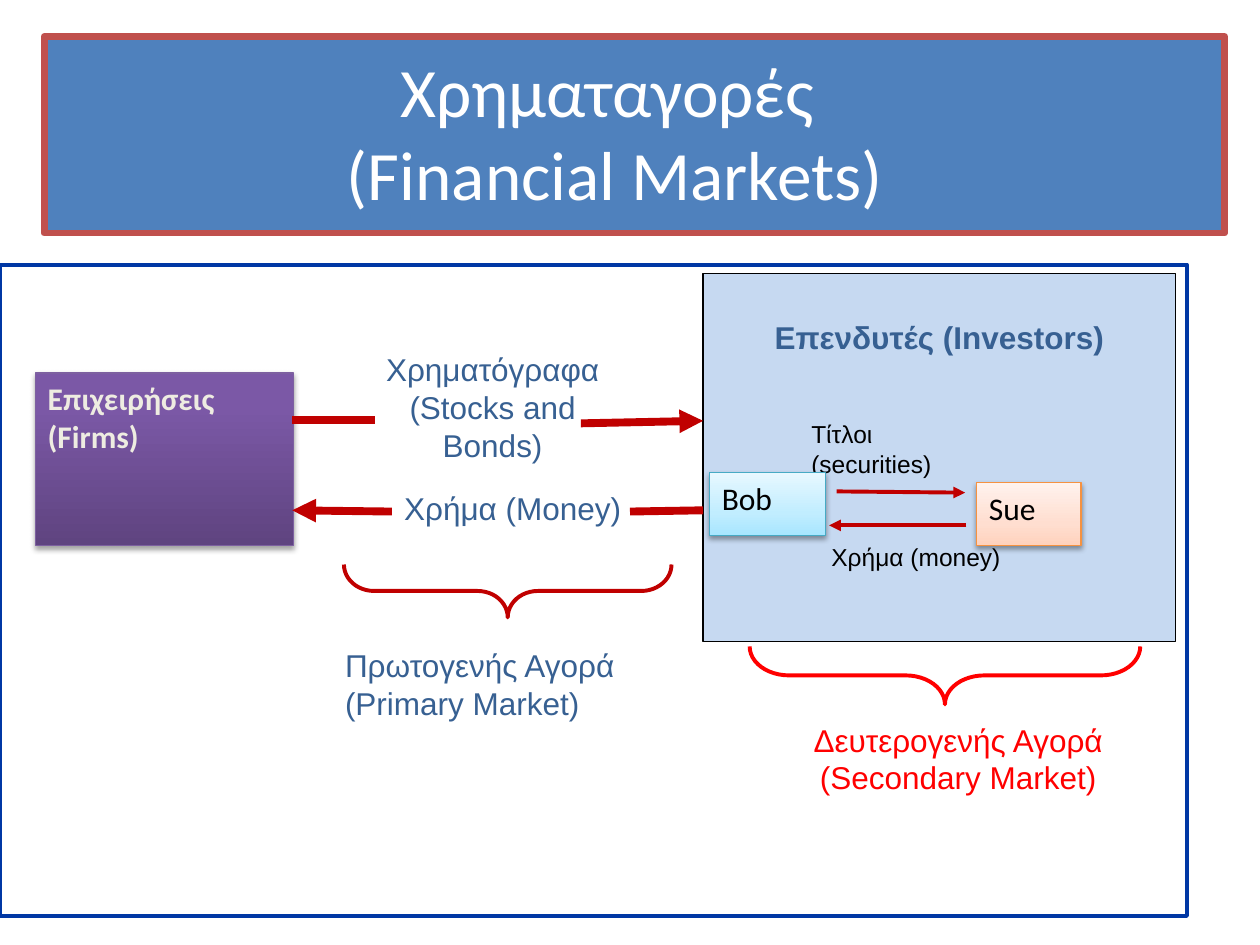
from copy import deepcopy

from lxml import etree
from pptx import Presentation
from pptx.dml.color import RGBColor
from pptx.enum.shapes import MSO_CONNECTOR, MSO_SHAPE
from pptx.enum.text import MSO_ANCHOR, PP_ALIGN
from pptx.oxml.ns import qn
from pptx.util import Emu, Pt

PX = 9144

RECTANGLE, LEFT_BRACE = MSO_SHAPE.RECTANGLE, MSO_SHAPE.LEFT_BRACE
STRAIGHT = MSO_CONNECTOR.STRAIGHT
TOP, MIDDLE = MSO_ANCHOR.TOP, MSO_ANCHOR.MIDDLE
LEFT, CENTER = PP_ALIGN.LEFT, PP_ALIGN.CENTER

WHITE = RGBColor(0xFF, 0xFF, 0xFF)
BLACK = RGBColor(0x00, 0x00, 0x00)
BLUE = RGBColor(0x4F, 0x81, 0xBD)
BRICK = RGBColor(0xC0, 0x50, 0x4D)
FRAME_BLUE = RGBColor(0x00, 0x37, 0xA4)
PALE_BLUE = RGBColor(0xC6, 0xD9, 0xF1)
TEXT_BLUE = RGBColor(0x37, 0x60, 0x92)
CREAM = RGBColor(0xEE, 0xEC, 0xE1)
DARK_RED = RGBColor(0xC0, 0x00, 0x00)
RED = RGBColor(0xFF, 0x00, 0x00)
PURPLE_LINE = RGBColor(0x7D, 0x60, 0xA0)
ORANGE_LINE = RGBColor(0xF6, 0x92, 0x40)
AQUA_LINE = RGBColor(0x46, 0xAA, 0xC5)
PURPLE_STOPS = ((0, RGBColor(0x5F, 0x44, 0x80)), (0.8, RGBColor(0x7B, 0x58, 0xA6)),
                (1, RGBColor(0x7C, 0x57, 0xA8)))
ORANGE_STOPS = ((0, RGBColor(0xFF, 0xD2, 0xBD)), (0.35, RGBColor(0xFF, 0xDE, 0xD0)),
                (1, RGBColor(0xFF, 0xF2, 0xED)))
AQUA_STOPS = ((0, RGBColor(0xA7, 0xE6, 0xFF)), (0.35, RGBColor(0xC1, 0xED, 0xFF)),
              (1, RGBColor(0xE7, 0xF8, 0xFF)))


def px(*lengths):
    return [Emu(length * PX) for length in lengths]


def write_text(shape, text, size=18, font="Arial", color=TEXT_BLUE, bold=False,
               align=LEFT, anchor=TOP, margin_top=5):
    frame = shape.text_frame
    frame.word_wrap = True
    frame.vertical_anchor = anchor
    frame.margin_top = Emu(margin_top * PX)
    paragraph = frame.paragraphs[0]
    paragraph.text = text
    paragraph.alignment = align
    for run in paragraph.runs:
        run.font.size = Pt(size)
        run.font.name = font
        run.font.bold = bold
        run.font.color.rgb = color


def add_label(slide, box, text, **text_format):
    write_text(slide.shapes.add_textbox(*px(*box)), text, **text_format)


def add_box(slide, box, fill, line, line_width):
    shape = slide.shapes.add_shape(RECTANGLE, *px(*box))
    shape.shadow.inherit = False
    shape.fill.solid()
    shape.fill.fore_color.rgb = fill
    shape.line.color.rgb = line
    shape.line.width = Pt(line_width)
    return shape


def add_raised_box(slide, box, stops, line, text, color):
    shape = add_box(slide, box, WHITE, line, 0.75)
    shape.fill.gradient()
    shape.fill.gradient_angle = 90
    properties = shape._element.spPr
    stop_list = properties.find(".//" + qn("a:gsLst"))
    stop_list.insert(1, deepcopy(stop_list[0]))
    for stop, (position, stop_color) in zip(shape.fill.gradient_stops, stops):
        stop.position = position
        stop.color.rgb = stop_color
    shadow = etree.SubElement(properties.find(qn("a:effectLst")), qn("a:outerShdw"),
                              blurRad=str(Pt(3.1)), dist=str(Pt(1.7)),
                              dir="5400000", rotWithShape="0")
    shadow_color = etree.SubElement(shadow, qn("a:srgbClr"), val="000000")
    etree.SubElement(shadow_color, qn("a:alpha"), val="36000")
    write_text(shape, text, font="Calibri", color=color, bold=color == CREAM)


def add_line(slide, start, end, width, arrow=True):
    connector = slide.shapes.add_connector(STRAIGHT, *px(*start, *end))
    connector.line.color.rgb = DARK_RED
    connector.line.width = Pt(width)
    properties = connector._element.spPr
    if arrow:
        etree.SubElement(properties.find(qn("a:ln")), qn("a:tailEnd"), type="triangle")
    etree.SubElement(properties, qn("a:effectLst"))


def add_brace(slide, box, color, curve):
    left, top, width, height = box
    offset = (width - height) // 2
    brace = slide.shapes.add_shape(
        LEFT_BRACE, *px(left + offset, top - offset, height, width))
    brace.rotation = 270
    brace.adjustments[0] = curve
    brace.shadow.inherit = False
    brace.fill.background()
    brace.line.color.rgb = color
    brace.line.width = Pt(2.25)


def add_title(slide, box):
    left, top, width, height = box
    add_box(slide, box, BLUE, BRICK, 4)
    add_label(slide, (left + 87, top + 2, 732, 147),
              "Χρηματαγορές \n(Financial Markets)", size=39.6, font="Calibri",
              color=WHITE, align=CENTER, anchor=MIDDLE)


def add_investors(slide, box):
    left, top, width, height = box
    investors = add_box(slide, box, PALE_BLUE, BLACK, 0.75)
    write_text(investors, "Επενδυτές (Investors)", bold=True, align=CENTER, margin_top=35)
    add_line(slide, (left + 209, top + 200), (left + 100, top + 200), 2.25)
    add_label(slide, (left + 92, top + 208, 157, 34), "Χρήμα (money)", size=14, color=BLACK)
    add_label(slide, (left + 76, top + 111, 165, 34), "Τίτλοι (securities)",
              size=14, color=BLACK)
    add_raised_box(slide, (left + 217, top + 166, 83, 50), ORANGE_STOPS, ORANGE_LINE,
                   "Sue", BLACK)
    add_raised_box(slide, (left + 5, top + 158, 92, 50), AQUA_STOPS, AQUA_LINE,
                   "Bob", BLACK)
    add_line(slide, (left + 106, top + 173), (left + 208, top + 174), 2.25)


def add_primary_market(slide, box):
    left, top, width, height = box
    right = left + width
    add_label(slide, (left + 52, top, 214, 95), "Χρηματόγραφα (Stocks and Bonds)",
              align=CENTER)
    add_line(slide, (left + 229, top + 63), (right, top + 61), 4.5)
    add_line(slide, (left, top + 60), (left + 66, top + 60), 4.5, arrow=False)
    add_label(slide, (left + 79, top + 110, 197, 51), "Χρήμα (Money)")
    add_line(slide, (left + 79, top + 133), (left, top + 132), 4.5)
    add_line(slide, (right, top + 132), (right - 58, top + 133), 4.5, arrow=False)
    add_brace(slide, (left + 41, top + 175, 260, 42), DARK_RED, 0.57)
    add_label(slide, (left + 32, top + 235, 280, 57), "Πρωτογενής Αγορά (Primary Market)")


def add_secondary_market(slide, box):
    left, top, width, height = box
    add_brace(slide, (left, top, width, 46), RED, 0.68)
    add_label(slide, (left + 11, top + 54, 309, 83), "Δευτερογενής Αγορά (Secondary Market)",
              color=RED, align=CENTER)


def main():
    presentation = Presentation()
    presentation.slide_width, presentation.slide_height = px(1000, 750)
    slide = presentation.slides.add_slide(presentation.slide_layouts[6])
    add_box(slide, (0, 210, 942, 517), WHITE, FRAME_BLUE, 2.25)
    add_title(slide, (35, 29, 937, 156))
    add_raised_box(slide, (28, 296, 205, 137), PURPLE_STOPS, PURPLE_LINE,
                   "Επιχειρήσεις\n(Firms)", CREAM)
    add_investors(slide, (558, 217, 375, 292))
    add_secondary_market(slide, (595, 513, 310, 137))
    add_primary_market(slide, (232, 273, 326, 292))
    presentation.save("out.pptx")


if __name__ == "__main__":
    main()
